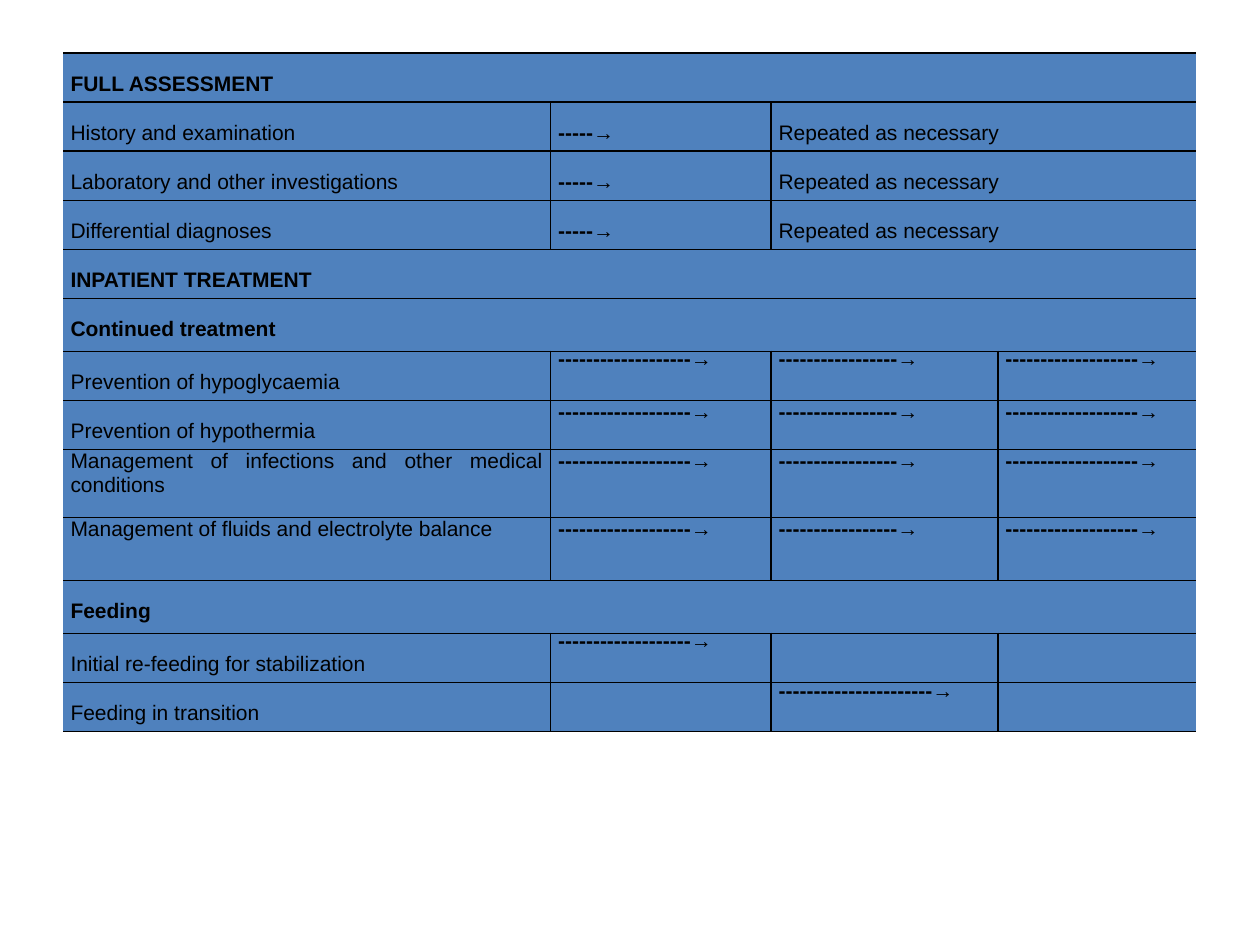
from pptx import Presentation
from pptx.dml.color import RGBColor
from pptx.enum.text import PP_ALIGN
from pptx.oxml.ns import qn
from pptx.util import Inches, Pt
from lxml.etree import SubElement

BLUE = RGBColor(0x4F, 0x81, 0xBD)
BLACK = RGBColor(0, 0, 0)
PLAIN_TABLE_STYLE = "{2D5ABB26-0587-4C30-8999-92F81FD0307C}"

COLUMN_WIDTHS = [2.23, 1.64, 1.75, 1.68, 0.12, 1.57]

# First and last column of each cell in a row
TITLE_SPANS = [(0, 0), (1, 1), (2, 2), (3, 3), (4, 5)]
SECTION_SPANS = [(0, 0), (1, 1), (2, 2), (3, 4), (5, 5)]
ASSESSMENT_SPANS = [(0, 1), (2, 2), (3, 5)]
TREATMENT_SPANS = [(0, 1), (2, 2), (3, 4), (5, 5)]

# Text placement: space above, line spacing
LOWERED = (Inches(0.18), Pt(11.4))
TOP = (0, Pt(11.4))
LOOSE = (0, None)


def arrow(dashes):
    return "-" * dashes + "→"


REPEATED = [arrow(5), "Repeated as necessary"]
CONTINUED = [arrow(19), arrow(17), arrow(19)]

# Height, spans, label placement, entry placement, texts
ROWS = [
    (0.39, TITLE_SPANS, LOWERED, TOP, ["FULL ASSESSMENT"]),
    (0.39, ASSESSMENT_SPANS, LOWERED, LOWERED, ["History and examination", *REPEATED]),
    (0.39, ASSESSMENT_SPANS, LOWERED, LOWERED, ["Laboratory and other investigations", *REPEATED]),
    (0.39, ASSESSMENT_SPANS, LOWERED, LOWERED, ["Differential diagnoses", *REPEATED]),
    (0.39, SECTION_SPANS, LOWERED, TOP, ["INPATIENT TREATMENT"]),
    (0.42, SECTION_SPANS, LOWERED, TOP, ["Continued treatment"]),
    (0.39, TREATMENT_SPANS, LOWERED, TOP, ["Prevention of hypoglycaemia", *CONTINUED]),
    (0.39, TREATMENT_SPANS, LOWERED, LOOSE, ["Prevention of hypothermia", *CONTINUED]),
    (0.54, TREATMENT_SPANS, LOOSE, LOOSE,
     ["Management of infections and other medical conditions", *CONTINUED]),
    (0.5, TREATMENT_SPANS, LOOSE, LOOSE,
     ["Management of fluids and electrolyte balance", *CONTINUED]),
    (0.42, SECTION_SPANS, LOWERED, TOP, ["Feeding"]),
    (0.39, TREATMENT_SPANS, LOWERED, TOP, ["Initial re-feeding for stabilization", arrow(19)]),
    (0.39, TREATMENT_SPANS, LOWERED, TOP, ["Feeding in transition", "", arrow(22)]),
]


def draw_borders(cell, sides):
    """Give the cell black 1 pt lines on the named sides and none elsewhere."""
    properties = cell._tc.get_or_add_tcPr()
    for side in "LRTB":
        line = SubElement(properties, qn(f"a:ln{side}"), w=str(Pt(1)))
        if side in sides:
            fill = SubElement(line, qn("a:solidFill"))
            SubElement(fill, qn("a:srgbClr"), val=str(BLACK))
        else:
            SubElement(line, qn("a:noFill"))


def write_text(cell, text, placement, bold):
    space_above, line_spacing = placement
    cell.margin_left = cell.margin_right = Inches(0.06)
    cell.margin_top, cell.margin_bottom = space_above, 0
    paragraph = cell.text_frame.paragraphs[0]
    paragraph.alignment = PP_ALIGN.JUSTIFY
    paragraph.line_spacing = line_spacing
    paragraph.font.size = Pt(12)
    if text:
        run = paragraph.add_run()
        run.text = text
        run.font.name = "Arial"
        run.font.size = Pt(12)
        run.font.bold = bold
        run.font.color.rgb = BLACK


def fill_row(table, row, spans, label_placement, entry_placement, texts):
    is_heading = spans in (TITLE_SPANS, SECTION_SPANS)
    last_column = len(COLUMN_WIDTHS) - 1
    for index, (first, last) in enumerate(spans):
        # Lines and fill run over every column of the span
        for column in range(first, last + 1):
            sides = "TB"
            if not is_heading and column == first > 0:
                sides += "L"
            if not is_heading and column == last < last_column:
                sides += "R"
            part = table.cell(row, column)
            draw_borders(part, sides)
            part.fill.solid()
            part.fill.fore_color.rgb = BLUE
        cell = table.cell(row, first)
        if last > first:
            cell.merge(table.cell(row, last))
        text = texts[index] if index < len(texts) else ""
        placement = entry_placement if index else label_placement
        write_text(cell, text, placement, bold=is_heading or text.endswith("→"))


def add_care_table(slide, left, top, width, height):
    frame = slide.shapes.add_table(len(ROWS), len(COLUMN_WIDTHS), left, top, width, height)
    table = frame.table
    table.first_row = table.horz_banding = False
    table._tbl.tblPr.find(qn("a:tableStyleId")).text = PLAIN_TABLE_STYLE
    for column, column_width in zip(table.columns, COLUMN_WIDTHS):
        column.width = Inches(column_width)
    for row, (row_height, *content) in enumerate(ROWS):
        table.rows[row].height = Inches(row_height)
        fill_row(table, row, *content)


def main():
    presentation = Presentation()
    presentation.slide_width, presentation.slide_height = Inches(10), Inches(7.5)
    slide = presentation.slides.add_slide(presentation.slide_layouts[6])
    add_care_table(slide, Inches(0.5), Inches(0.42), Inches(9), Inches(5.38))
    presentation.save("out.pptx")


if __name__ == "__main__":
    main()
